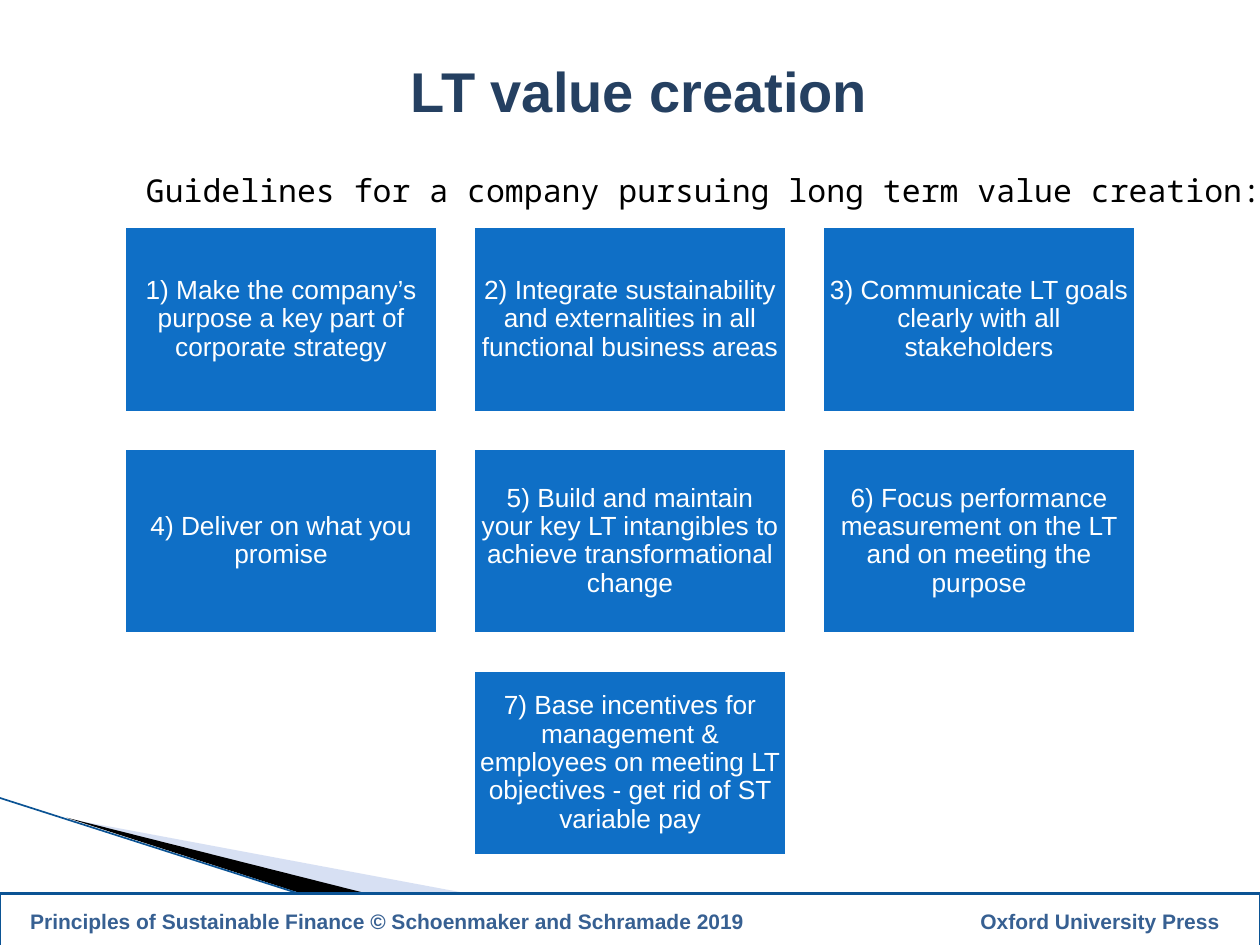
"""Build the slide of guidelines for long term value creation."""
from lxml.etree import SubElement
from pptx import Presentation
from pptx.dml.color import RGBColor
from pptx.enum.shapes import MSO_CONNECTOR, MSO_SHAPE
from pptx.enum.text import MSO_ANCHOR, PP_ALIGN
from pptx.oxml.ns import qn
from pptx.util import Inches, Pt

TITLE = "LT value creation"
INTRO = "Guidelines for a company pursuing long term value creation:"
FOOTER = ("Principles of Sustainable Finance © Schoenmaker and Schramade 2019"
          "\tOxford University Press")
GUIDELINES = [
    ["1) Make the company’s purpose a key part of corporate strategy",
     "2) Integrate sustainability and externalities in all functional business areas",
     "3) Communicate LT goals clearly with all stakeholders"],
    ["4) Deliver on what you promise",
     "5) Build and maintain your key LT intangibles to achieve transformational change",
     "6) Focus performance measurement on the LT and on meeting the purpose"],
    ["7) Base incentives for management & employees on meeting LT objectives"
     " - get rid of ST variable pay"],
]
WEDGES = [
    ([(0.55, 6.5), (5.95, 7.51), (4.56, 7.51)], "9DB2E1", 40),
    ([(0.53, 6.49), (4.57, 7.51), (3.72, 7.52)], "000000", 100),
]
BOX_W, BOX_H, GAP, GRID_TOP = 2.52, 1.51, 0.25, 1.78
SLIDE_W, SLIDE_H = 10, 7.5


def rgb(value):
    return RGBColor.from_string(value)


def paint(shape, fill, line=None, width=1):
    shape.shadow.inherit = False
    shape.fill.solid()
    shape.fill.fore_color.rgb = rgb(fill)
    if line:
        shape.line.color.rgb = rgb(line)
        shape.line.width = Pt(width)
    else:
        shape.line.fill.background()


def write(shape, text, size, color, font="Arial", bold=False,
          align=PP_ALIGN.LEFT, inset=0.1):
    tf = shape.text_frame
    tf.word_wrap = True
    tf.vertical_anchor = MSO_ANCHOR.MIDDLE
    tf.margin_left = tf.margin_right = Inches(inset)
    tf.margin_top = tf.margin_bottom = Inches(0.05)
    p = tf.paragraphs[0]
    p.alignment = align
    r = p.add_run()
    r.text = text
    r.font.size, r.font.name, r.font.bold = Pt(size), font, bold
    r.font.color.rgb = rgb(color)
    return p


def add_rect(s, x, y, w, h):
    return s.shapes.add_shape(MSO_SHAPE.RECTANGLE, Inches(x), Inches(y), Inches(w), Inches(h))


def add_decoration(s):
    for points, color, opacity in WEDGES:
        start, *rest = [(Inches(x), Inches(y)) for x, y in points]
        builder = s.shapes.build_freeform(*start)
        builder.add_line_segments(rest, close=True)
        wedge = builder.convert_to_shape()
        paint(wedge, color)
        if opacity < 100:
            clr = wedge.fill._xPr.find(qn("a:solidFill"))[0]
            SubElement(clr, qn("a:alpha"), val=str(opacity * 1000))
    edge = s.shapes.add_connector(MSO_CONNECTOR.STRAIGHT, Inches(-0.01), Inches(6.33),
                                  Inches(3.71), Inches(7.52))
    edge.line.color.rgb = rgb("0B5394")
    edge.line.width = Pt(0.95)
    SubElement(edge._element.spPr, qn("a:effectLst"))


def add_title(s):
    title = s.shapes.title
    title.left, title.top = Inches(0.35), Inches(0.36)
    title.width, title.height = Inches(9.45), Inches(0.71)
    write(title, TITLE, 32, "254061", bold=True, align=PP_ALIGN.CENTER)


def add_footer(s):
    inset = 0.24
    bar = add_rect(s, 0, 7.09, SLIDE_W, 0.44)
    paint(bar, "FFFFFF", "0B5394", 1.5)
    p = write(bar, FOOTER, 12, "376092", bold=True, inset=inset)
    tabs = SubElement(p._p.get_or_add_pPr(), qn("a:tabLst"))
    SubElement(tabs, qn("a:tab"), pos=str(Inches(9.68 - inset)), algn="r")


def add_guidelines(s):
    for row, texts in enumerate(GUIDELINES):
        row_w = len(texts) * (BOX_W + GAP) - GAP
        left = (SLIDE_W - row_w) / 2
        for col, text in enumerate(texts):
            box = add_rect(s, left + col * (BOX_W + GAP),
                           GRID_TOP + row * (BOX_H + GAP), BOX_W, BOX_H)
            paint(box, "0F6FC6", "FFFFFF", 4.33)
            p = write(box, text, 15, "FFFFFF", align=PP_ALIGN.CENTER, inset=0.06)
            p.line_spacing = 0.9


def main():
    prs = Presentation()
    prs.slide_width, prs.slide_height = Inches(SLIDE_W), Inches(SLIDE_H)
    s = prs.slides.add_slide(prs.slide_layouts[5])
    add_decoration(s)
    add_title(s)
    add_footer(s)
    intro = s.shapes.add_textbox(Inches(1.06), Inches(1.15), Inches(9.06), Inches(0.71))
    write(intro, INTRO, 18, "000000", font="Noto Sans Mono")
    add_guidelines(s)
    prs.save("out.pptx")


if __name__ == "__main__":
    main()
